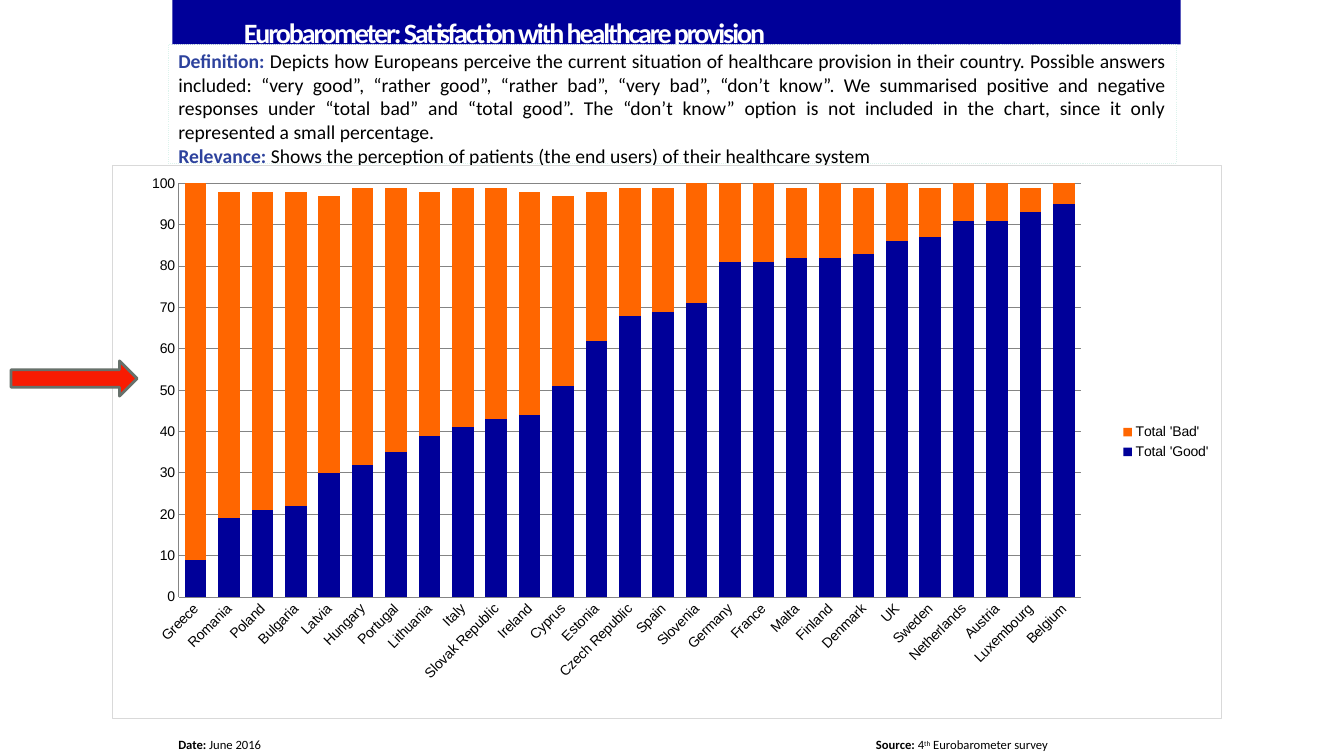
from lxml.etree import SubElement
from pptx import Presentation
from pptx.chart.data import CategoryChartData
from pptx.dml.color import RGBColor
from pptx.enum.chart import XL_CHART_TYPE, XL_LEGEND_POSITION, XL_TICK_MARK
from pptx.enum.dml import MSO_LINE
from pptx.enum.shapes import MSO_SHAPE
from pptx.enum.text import MSO_ANCHOR, PP_ALIGN
from pptx.oxml import parse_xml
from pptx.oxml.ns import nsdecls, qn
from pptx.util import Inches, Pt

NAVY = RGBColor(0x00, 0x00, 0x99)
ORANGE = RGBColor(0xFF, 0x66, 0x00)
HEADING_BLUE = RGBColor(0x2D, 0x42, 0x9D)
MINT = RGBColor(0xDC, 0xF3, 0xEC)
RED = RGBColor(0xF8, 0x1B, 0x02)
SLATE = RGBColor(0x67, 0x71, 0x6B)
GREY = RGBColor(0x84, 0x84, 0x84)
BORDER_GREY = RGBColor(0xD9, 0xD9, 0xD9)
BLACK = RGBColor(0, 0, 0)
WHITE = RGBColor(0xFF, 0xFF, 0xFF)

DEFINITION = (
    "Depicts how Europeans perceive the current situation of healthcare provision in their "
    "country. Possible answers included: “very good”, “rather good”, “rather bad”, “very bad”, "
    "“don’t know”. We summarised positive and negative responses under “total bad” and “total "
    "good”. The “don’t know” option is not included in the chart, since it only represented a "
    "small percentage."
)
RELEVANCE = "Shows the perception of patients (the end users) of their healthcare system"

# country, total good, total bad
SATISFACTION = [
    ("Greece", 9, 91), ("Romania", 19, 79), ("Poland", 21, 77), ("Bulgaria", 22, 76),
    ("Latvia", 30, 67), ("Hungary", 32, 67), ("Portugal", 35, 64), ("Lithuania", 39, 59),
    ("Italy", 41, 58), ("Slovak Republic", 43, 56), ("Ireland", 44, 54), ("Cyprus", 51, 46),
    ("Estonia", 62, 36), ("Czech Republic", 68, 31), ("Spain", 69, 30), ("Slovenia", 71, 29),
    ("Germany", 81, 19), ("France", 81, 19), ("Malta", 82, 17), ("Finland", 82, 18),
    ("Denmark", 83, 16), ("UK", 86, 14), ("Sweden", 87, 12), ("Netherlands", 91, 9),
    ("Austria", 91, 9), ("Luxembourg", 93, 6), ("Belgium", 95, 5),
]


def add_box(slide, preset, left, top, width, height, fill=None, line=None, line_width=0.75):
    box = slide.shapes.add_shape(
        preset, Inches(left), Inches(top), Inches(width), Inches(height))
    box.shadow.inherit = False
    if fill is None:
        box.fill.background()
    else:
        box.fill.solid()
        box.fill.fore_color.rgb = fill
    if line is None:
        box.line.fill.background()
    else:
        box.line.color.rgb = line
        box.line.width = Pt(line_width)
    box.text_frame.vertical_anchor = MSO_ANCHOR.TOP
    return box


def set_font(font, size, color, name="Calibri"):
    font.name = name
    font.size = Pt(size)
    font.color.rgb = color


def add_run(paragraph, text, bold=False):
    run = paragraph.add_run()
    run.text = text
    run.font.bold = bold
    return run


def add_title(slide):
    band = add_box(slide, MSO_SHAPE.RECTANGLE, 1.71, -0.03, 10, 0.47, fill=NAVY)
    frame = band.text_frame
    frame.margin_left = Inches(0.71)
    frame.margin_top = frame.margin_right = frame.margin_bottom = Inches(0.25)
    heading = frame.paragraphs[0]
    heading.alignment = PP_ALIGN.LEFT
    heading.line_spacing = 0.85
    set_font(heading.font, 20, WHITE)
    run = add_run(heading, "Eurobarometer: Satisfaction with healthcare provision", bold=True)
    run.font._element.set("spc", "-150")


def add_explanation(slide):
    box = add_box(slide, MSO_SHAPE.RECTANGLE, 1.67, 0.44, 10, 1.18, line=MINT)
    box.line.dash_style = MSO_LINE.ROUND_DOT
    frame = box.text_frame
    frame.word_wrap = True
    entries = [("Definition: ", DEFINITION), ("Relevance: ", RELEVANCE)]
    for index, (label, body) in enumerate(entries):
        entry = frame.add_paragraph() if index else frame.paragraphs[0]
        entry.alignment = PP_ALIGN.JUSTIFY
        set_font(entry.font, 14, BLACK)
        add_run(entry, label, bold=True).font.color.rgb = HEADING_BLUE
        add_run(entry, body)


def add_footer(slide):
    box = slide.shapes.add_textbox(Inches(1.67), Inches(7.14), Inches(10), Inches(0.4))
    box.text_frame.word_wrap = True
    footer = box.text_frame.paragraphs[0]
    set_font(footer.font, 9, BLACK)
    tabs = SubElement(footer._p.get_or_add_pPr(), qn("a:tabLst"))
    footer._p.pPr.insert(0, tabs)
    SubElement(tabs, qn("a:tab"), pos=str(Inches(6.92)), algn="l")
    add_run(footer, "Date: ", bold=True)
    add_run(footer, "June 2016")
    add_run(footer, "\t").font.size = Pt(18)
    add_run(footer, "Source: ", bold=True)
    add_run(footer, "4")
    add_run(footer, "th").font._element.set("baseline", "30000")
    add_run(footer, " Eurobarometer survey")


def style_line(line, color):
    line.color.rgb = color
    line.width = Pt(0.75)


def place_plot(chart, left, top, width, height):
    """Fix the inner plot area, given as fractions of the chart."""
    plot_area = chart._chartSpace.chart.plotArea
    for layout in plot_area.findall(qn("c:layout")):
        plot_area.remove(layout)
    layout = parse_xml(
        f'<c:layout {nsdecls("c")}><c:manualLayout><c:layoutTarget val="inner"/>'
        '<c:xMode val="edge"/><c:yMode val="edge"/>'
        f'<c:x val="{left}"/><c:y val="{top}"/><c:w val="{width}"/><c:h val="{height}"/>'
        '</c:manualLayout></c:layout>')
    plot_area.insert(0, layout)


def frame_chart(chart):
    """Give the whole chart a white ground and a thin border."""
    chart._chartSpace.chart.addnext(parse_xml(
        f'<c:spPr {nsdecls("c", "a")}>'
        f'<a:solidFill><a:srgbClr val="{WHITE}"/></a:solidFill>'
        f'<a:ln w="{Pt(0.75)}"><a:solidFill><a:srgbClr val="{BORDER_GREY}"/></a:solidFill>'
        '</a:ln></c:spPr>'))


def add_satisfaction_chart(slide):
    countries, good, bad = zip(*SATISFACTION)
    data = CategoryChartData()
    data.categories = countries
    data.add_series("Total 'Good'", good)
    data.add_series("Total 'Bad'", bad)
    chart = slide.shapes.add_chart(
        XL_CHART_TYPE.COLUMN_STACKED,
        Inches(1.11), Inches(1.64), Inches(11.01), Inches(5.49), data).chart
    chart.has_title = False
    set_font(chart.font, 10, BLACK, "Arial")
    frame_chart(chart)
    place_plot(chart, 0.06, 0.032, 0.813, 0.749)

    columns = chart.plots[0]
    columns.gap_width = 55
    columns.overlap = 100
    columns.vary_by_categories = False
    for series, color in zip(columns.series, (NAVY, ORANGE)):
        series.format.fill.solid()
        series.format.fill.fore_color.rgb = color

    countries_axis, percent_axis = chart.category_axis, chart.value_axis
    for axis in (countries_axis, percent_axis):
        axis.major_tick_mark = axis.minor_tick_mark = XL_TICK_MARK.NONE
        style_line(axis.format.line, GREY)
        set_font(axis.tick_labels.font, 10, BLACK, "Arial")
    countries_axis._element.find(qn("c:txPr")).find(qn("a:bodyPr")).set("rot", "-2700000")
    percent_axis.minimum_scale = 0
    percent_axis.maximum_scale = 100
    percent_axis.major_unit = 10
    percent_axis.has_major_gridlines = True
    style_line(percent_axis.major_gridlines.format.line, GREY)

    chart.has_legend = True
    chart.legend.position = XL_LEGEND_POSITION.RIGHT
    chart.legend.include_in_layout = False
    set_font(chart.legend.font, 10, BLACK, "Arial")


def main():
    deck = Presentation()
    deck.slide_width, deck.slide_height = Inches(13.33), Inches(7.5)
    slide = deck.slides.add_slide(deck.slide_layouts[6])
    add_title(slide)
    add_explanation(slide)
    add_footer(slide)
    add_satisfaction_chart(slide)
    add_box(slide, MSO_SHAPE.RIGHT_ARROW, 0.11, 3.58, 1.25, 0.35,
            fill=RED, line=SLATE, line_width=2)
    deck.save("out.pptx")


if __name__ == "__main__":
    main()
